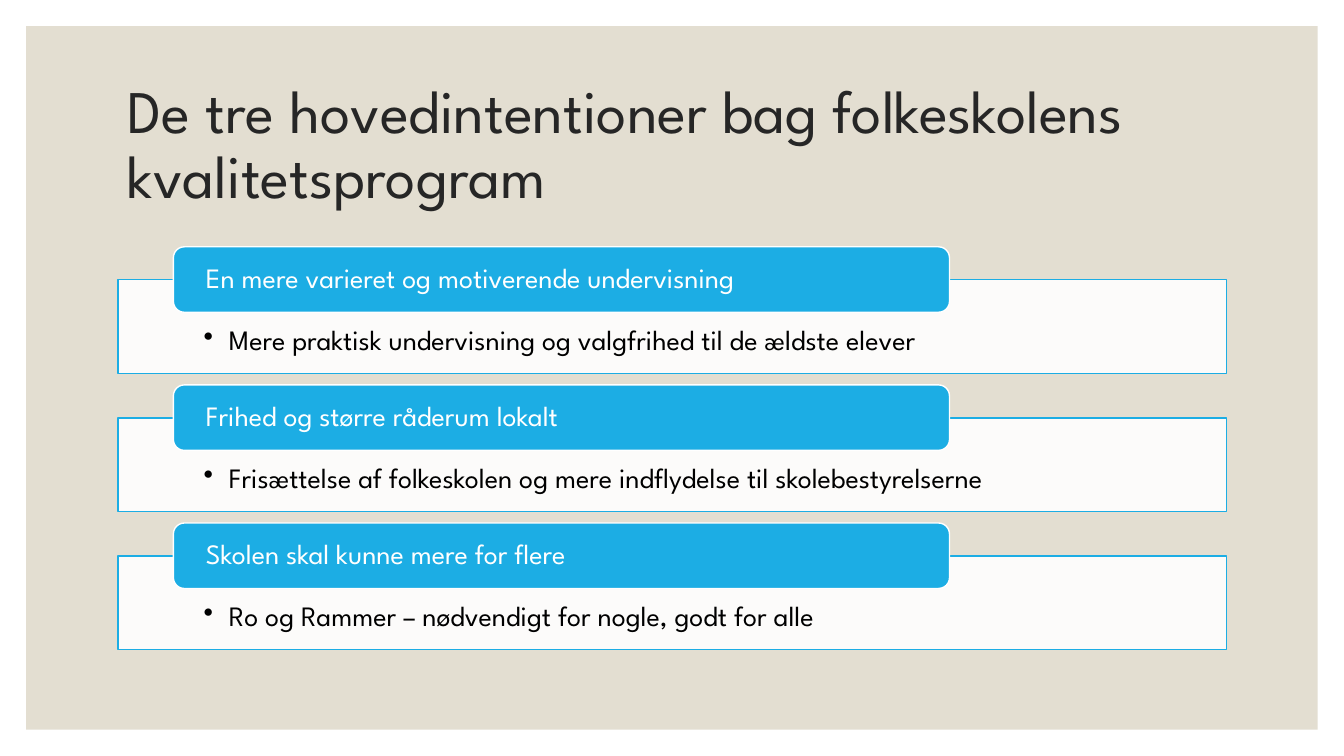
from lxml import etree
from pptx import Presentation
from pptx.dml.color import RGBColor
from pptx.enum.shapes import MSO_SHAPE
from pptx.enum.text import MSO_ANCHOR, PP_ALIGN
from pptx.oxml.ns import qn
from pptx.util import Cm, Pt

RECTANGLE = MSO_SHAPE.RECTANGLE
ROUNDED = MSO_SHAPE.ROUNDED_RECTANGLE
TOP, MIDDLE = MSO_ANCHOR.TOP, MSO_ANCHOR.MIDDLE
LEFT = PP_ALIGN.LEFT

TITLE = "De tre hovedintentioner bag folkeskolens kvalitetsprogram"
INTENTIONS = [
    ("En mere varieret og motiverende undervisning",
     "Mere praktisk undervisning og valgfrihed til de ældste elever"),
    ("Frihed og større råderum lokalt",
     "Frisættelse af folkeskolen og mere indflydelse til skolebestyrelserne"),
    ("Skolen skal kunne mere for flere",
     "Ro og Rammer – nødvendigt for nogle, godt for alle"),
]

FONT = "League Spartan"
BLUE, WHITE, BLACK = "1CADE4", "FFFFFF", "000000"
SAND, CHARCOAL = "E3DED1", "262626"

SLIDE_WIDTH, SLIDE_HEIGHT = 33.87, 19.05
MARGIN = 0.66
CONTENT_LEFT, CONTENT_WIDTH = 2.97, 27.94
HEADING_LEFT, HEADING_TOP = 4.37, 6.22
HEADING_WIDTH, HEADING_HEIGHT = 19.56, 1.65
DETAIL_HEIGHT, DETAIL_OFFSET = 2.36, 0.83
ROW_PITCH = 3.48
BULLET_INDENT = 0.64


def color(hex_code):
    return RGBColor.from_string(hex_code)


def add_box(page, kind, left, top, width, height, fill, line=None, opacity=100):
    box = page.shapes.add_shape(kind, Cm(left), Cm(top), Cm(width), Cm(height))
    box.shadow.inherit = False
    box.fill.solid()
    box.fill.fore_color.rgb = color(fill)
    if opacity < 100:
        shade = box.fill._xPr.find(qn("a:solidFill"))[0]
        etree.SubElement(shade, qn("a:alpha"), val=str(opacity * 1000))
    if line:
        box.line.color.rgb = color(line)
        box.line.width = Pt(1)
    else:
        box.line.fill.background()
    return box


def write(box, text, size=20, ink=BLACK, anchor=MIDDLE,
          insets=(0.25, 0.13, 0.25, 0.13), bullet=False):
    frame = box.text_frame
    frame.word_wrap = True
    frame.vertical_anchor = anchor
    (frame.margin_left, frame.margin_top,
     frame.margin_right, frame.margin_bottom) = map(Cm, insets)
    para = frame.paragraphs[0]
    para.alignment = LEFT
    para.line_spacing = 0.9
    if bullet:
        settings = para._p.get_or_add_pPr()
        settings.set("marL", str(Cm(BULLET_INDENT)))
        settings.set("indent", str(-Cm(BULLET_INDENT)))
        etree.SubElement(settings, qn("a:buChar"), char="•")
    span = para.add_run()
    span.text = text
    span.font.name = FONT
    span.font.size = Pt(size)
    span.font.color.rgb = color(ink)


def main():
    deck = Presentation()
    deck.slide_width, deck.slide_height = Cm(SLIDE_WIDTH), Cm(SLIDE_HEIGHT)
    page = deck.slides.add_slide(deck.slide_layouts[6])

    add_box(page, RECTANGLE, MARGIN, MARGIN, SLIDE_WIDTH - 2 * MARGIN,
            SLIDE_HEIGHT - 2 * MARGIN, SAND)
    title = page.shapes.add_textbox(Cm(CONTENT_LEFT), Cm(1.78),
                                    Cm(CONTENT_WIDTH), Cm(3.81))
    write(title, TITLE, size=43.2, ink=CHARCOAL)

    for row, (heading, detail) in enumerate(INTENTIONS):
        top = HEADING_TOP + row * ROW_PITCH
        panel = add_box(page, RECTANGLE, CONTENT_LEFT, top + DETAIL_OFFSET,
                        CONTENT_WIDTH, DETAIL_HEIGHT, WHITE, BLUE, opacity=90)
        write(panel, detail, anchor=TOP, insets=(2.16, 1.17, 2.16, 0.41), bullet=True)
        label = add_box(page, ROUNDED, HEADING_LEFT, top,
                        HEADING_WIDTH, HEADING_HEIGHT, BLUE, WHITE)
        write(label, heading, ink=WHITE, insets=(0.74, 0, 0.74, 0))

    deck.save("out.pptx")


if __name__ == "__main__":
    main()
